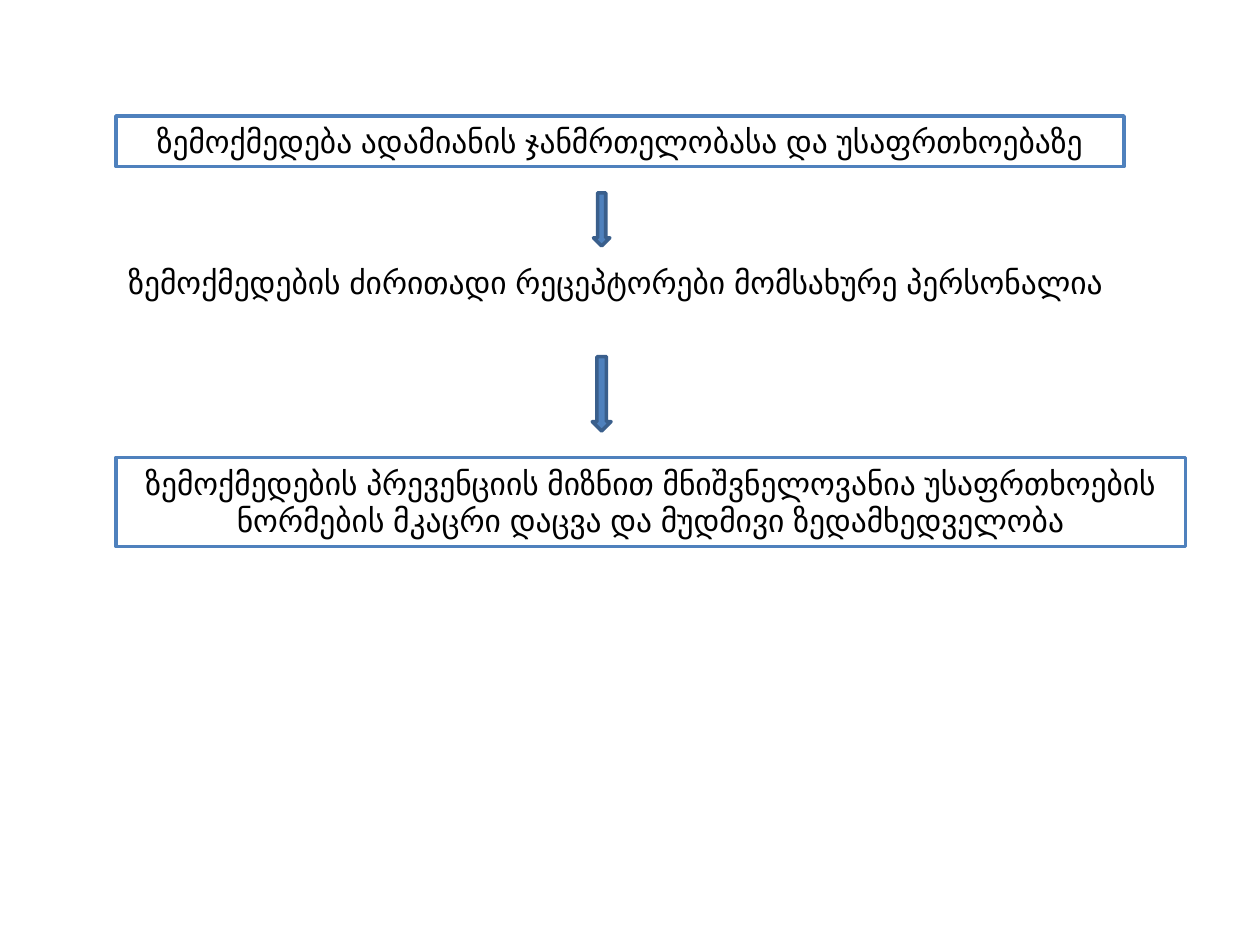
import pptx
import pptx.dml.color
import pptx.enum.shapes
import pptx.enum.text
import pptx.util

Cm = pptx.util.Cm
Pt = pptx.util.Pt
SHAPE = pptx.enum.shapes.MSO_SHAPE
ALIGN = pptx.enum.text.PP_ALIGN
LEFT = 2.34
ARROW_CENTRE = 12.13


def colour(value):
    return pptx.dml.color.RGBColor.from_string(value)


def write(frame, wording, alignment):
    frame.word_wrap = True
    frame.auto_size = pptx.enum.text.MSO_AUTO_SIZE.SHAPE_TO_FIT_TEXT
    frame.vertical_anchor = pptx.enum.text.MSO_ANCHOR.TOP
    paragraph = frame.paragraphs[0]
    paragraph.text = wording
    paragraph.alignment = alignment
    paragraph.font.name = "Arial"
    paragraph.font.size = Pt(18)
    paragraph.font.color.rgb = colour("000000")


def add_outlined(slide, preset, left, top, width, height, fill, line):
    shape = slide.shapes.add_shape(preset, Cm(left), Cm(top), Cm(width), Cm(height))
    shape.shadow.inherit = False
    shape.fill.solid()
    shape.fill.fore_color.rgb = colour(fill)
    shape.line.color.rgb = colour(line)
    shape.line.width = Pt(2)
    return shape


def add_framed_statement(slide, top, width, height, wording):
    statement = add_outlined(slide, SHAPE.RECTANGLE, LEFT, top, width, height, "FFFFFF", "4F81BD")
    write(statement.text_frame, wording, ALIGN.CENTER)


def add_plain_statement(slide, top, width, height, wording):
    statement = slide.shapes.add_textbox(Cm(LEFT), Cm(top), Cm(width), Cm(height))
    write(statement.text_frame, wording, ALIGN.LEFT)


def add_down_arrow(slide, top, width, height):
    left = ARROW_CENTRE - width / 2
    add_outlined(slide, SHAPE.DOWN_ARROW, left, top, width, height, "4F81BD", "3A5F8C")


def main():
    """Build the slide that leads from health impact to prevention."""
    deck = pptx.Presentation()
    deck.slide_width = Cm(25.4)
    deck.slide_height = Cm(19.05)
    slide = deck.slides.add_slide(deck.slide_layouts[6])
    add_framed_statement(slide, 2.34, 20.32, 1.02,
                         "ზემოქმედება ადამიანის ჯანმრთელობასა და უსაფრთხოებაზე")
    add_plain_statement(slide, 5.18, 20.8, 1.02,
                        "ზემოქმედების ძირითადი რეცეპტორები მომსახურე პერსონალია")
    add_framed_statement(slide, 9.22, 21.56, 1.8,
                         "ზემოქმედების პრევენციის მიზნით მნიშვნელოვანია უსაფრთხოების "
                         "ნორმების მკაცრი დაცვა და მუდმივი ზედამხედველობა")
    add_down_arrow(slide, 3.89, 0.33, 1.07)
    add_down_arrow(slide, 7.19, 0.38, 1.5)
    deck.save("out.pptx")


if __name__ == "__main__":
    main()
